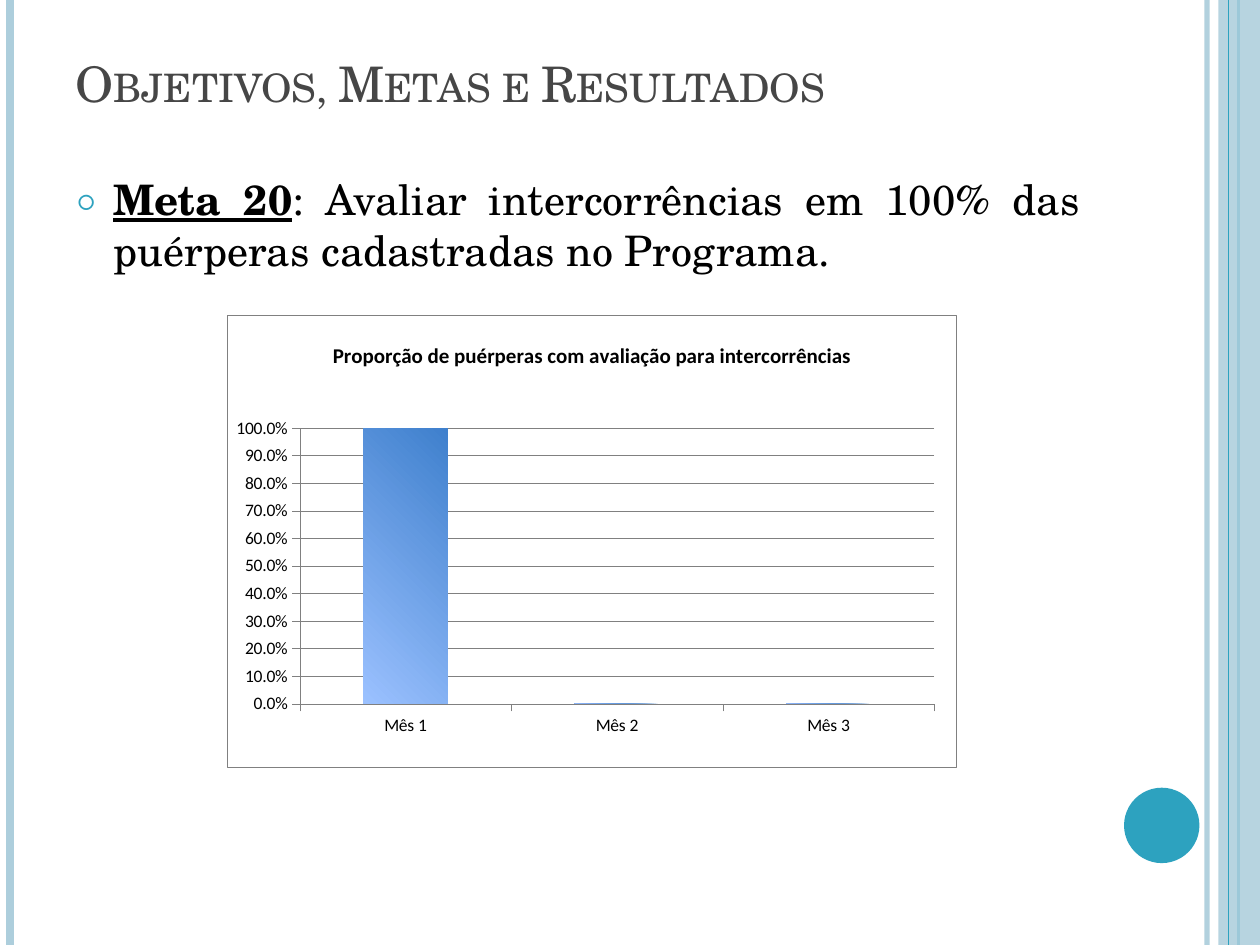
from dataclasses import dataclass

from lxml.etree import SubElement
from pptx import Presentation
from pptx.chart.data import CategoryChartData
from pptx.dml.color import RGBColor
from pptx.enum.chart import XL_CHART_TYPE as ChartType, XL_TICK_MARK as TickMark
from pptx.enum.shapes import MSO_CONNECTOR as Connector, MSO_SHAPE as Shape
from pptx.enum.text import MSO_ANCHOR as Anchor, MSO_AUTO_SIZE as AutoSize, PP_ALIGN as Align
from pptx.oxml import parse_xml
from pptx.oxml.ns import nsdecls, qn
from pptx.util import Cm, Pt


@dataclass(frozen=True)
class Theme:
    accent: str = "2DA2BF"
    pale: str = "ADCEDC"
    heading: str = "464646"
    text: str = "000000"
    background: str = "FFFFFF"
    axis: str = "808080"
    bar_light: str = "9BC1FF"
    bar_dark: str = "3F80CD"
    text_font: str = "TeX Gyre Schola"
    chart_font: str = "Calibri"
    title_size: int = 28
    body_size: int = 24
    chart_title_size: int = 12
    chart_size: int = 10
    hairline: float = 0.25


def set_alpha(element, percent):
    for color in element.iter(qn("a:srgbClr")):
        SubElement(color, qn("a:alpha")).set("val", str(percent * 1000))


def set_layout(element, index, **values):
    """Give a chart part a manual layout, as fractions of the chart."""
    for old in element.findall(qn("c:layout")):
        element.remove(old)
    layout = SubElement(element, qn("c:layout"))
    element.insert(index, layout)
    manual = SubElement(layout, qn("c:manualLayout"))
    for name, value in values.items():
        SubElement(manual, qn(f"c:{name}")).set("val", str(value))


class SlideBuilder:
    def __init__(self, slide, theme):
        self.slide = slide
        self.theme = theme

    def style_font(self, font, size, color, name, bold=False):
        font.size = Pt(size)
        font.color.rgb = RGBColor.from_string(color)
        font.name = name
        font.bold = bold

    def style_line(self, line, color, width):
        line.color.rgb = RGBColor.from_string(color)
        line.width = Pt(width)

    def place(self, shape, left, top, width, height, anchor):
        shape.left, shape.top, shape.width, shape.height = map(Cm, (left, top, width, height))
        frame = shape.text_frame
        frame.auto_size = AutoSize.NONE
        frame.vertical_anchor = anchor
        return frame.paragraphs[0]

    def vertical_line(self, x, color, width, opacity=100):
        line = self.slide.shapes.add_connector(Connector.STRAIGHT, Cm(x), 0, Cm(x), Cm(19.05))
        self.style_line(line.line, color, width)
        properties = line._element.spPr
        set_alpha(properties, opacity)
        SubElement(properties, qn("a:effectLst"))

    def solid_shape(self, kind, left, top, width, height, color, opacity=100):
        shape = self.slide.shapes.add_shape(kind, Cm(left), Cm(top), Cm(width), Cm(height))
        shape.shadow.inherit = False
        shape.fill.solid()
        shape.fill.fore_color.rgb = RGBColor.from_string(color)
        shape.line.fill.background()
        set_alpha(shape._element.spPr, opacity)

    def title(self, text, *box):
        theme = self.theme
        paragraph = self.place(self.slide.shapes.title, *box, Anchor.BOTTOM)
        paragraph.alignment = Align.LEFT
        run = paragraph.add_run()
        run.text = text
        self.style_font(run.font, theme.title_size, theme.heading, theme.text_font)
        run._r.get_or_add_rPr().set("cap", "small")

    def bullet(self, label, text, *box):
        theme = self.theme
        paragraph = self.place(self.slide.placeholders[1], *box, Anchor.TOP)
        paragraph.alignment = Align.JUSTIFY
        paragraph.space_before = Pt(6)
        properties = paragraph._p.get_or_add_pPr()
        properties.set("marL", str(Cm(0.76)))
        properties.set("indent", str(-Cm(0.76)))
        bullet_color = SubElement(properties, qn("a:buClr"))
        SubElement(bullet_color, qn("a:srgbClr")).set("val", theme.accent)
        SubElement(properties, qn("a:buSzPct")).set("val", "70000")
        SubElement(properties, qn("a:buFont")).set("typeface", theme.text_font)
        SubElement(properties, qn("a:buChar")).set("char", "○")
        for content, strong in ((label, True), (text, False)):
            run = paragraph.add_run()
            run.text = content
            self.style_font(run.font, theme.body_size, theme.text, theme.text_font, strong)
            run.font.underline = strong

    def column_chart(self, name, categories, values, *box):
        theme = self.theme
        data = CategoryChartData(number_format="0.0%")
        data.categories = categories
        data.add_series(name, values)
        chart = self.slide.shapes.add_chart(
            ChartType.COLUMN_CLUSTERED, *map(Cm, box), data).chart
        self.style_font(chart.font, theme.chart_size, theme.text, theme.chart_font)
        chart.has_legend = False
        chart.has_title = True
        run = chart.chart_title.text_frame.paragraphs[0].add_run()
        run.text = name
        self.style_font(run.font, theme.chart_title_size, theme.text, theme.chart_font, True)
        set_layout(chart.chart_title._element, 1, xMode="edge", yMode="edge", x=0.14, y=0.05)

        for axis in (chart.category_axis, chart.value_axis):
            axis.major_tick_mark = TickMark.OUTSIDE
            axis.minor_tick_mark = TickMark.NONE
            self.style_line(axis.format.line, theme.axis, theme.hairline)
            self.style_font(axis.tick_labels.font, theme.chart_size, theme.text, theme.chart_font)
        value_axis = chart.value_axis
        value_axis.minimum_scale, value_axis.maximum_scale, value_axis.major_unit = 0, 1, 0.1
        value_axis.tick_labels.number_format = "0.0%"
        value_axis.tick_labels.number_format_is_linked = False
        self.style_line(value_axis.major_gridlines.format.line, theme.axis, theme.hairline)

        plot = chart.plots[0]
        plot.gap_width = 150
        plot.vary_by_categories = False
        self.radial_fill(plot.series[0])
        chart_part = chart._chartSpace.find(qn("c:chart"))
        plot_area = chart_part.find(qn("c:plotArea"))
        set_layout(plot_area, 0, layoutTarget="inner", xMode="edge", yMode="edge",
                   x=0.1, y=0.25, w=0.87, h=0.61)
        plot_area.append(self.area_format("<a:ln><a:noFill/></a:ln>"))
        chart_part.addnext(self.area_format(
            f'<a:ln w="{Pt(theme.hairline)}"><a:solidFill><a:srgbClr val="{theme.axis}"/>'
            "</a:solidFill></a:ln>"))

    def radial_fill(self, series):
        """Shade the bars outwards from their bottom left corner."""
        fill = series.format.fill
        fill.gradient()
        for stop, color in zip(fill.gradient_stops, (self.theme.bar_light, self.theme.bar_dark)):
            stop.color.rgb = RGBColor.from_string(color)
        linear = series._element.find(".//" + qn("a:lin"))
        linear.addnext(parse_xml(
            f'<a:path {nsdecls("a")} path="circle"><a:fillToRect t="100000" r="100000"/></a:path>'))
        linear.getparent().remove(linear)

    def area_format(self, outline):
        return parse_xml(
            f'<c:spPr {nsdecls("c", "a")}><a:solidFill>'
            f'<a:srgbClr val="{self.theme.background}"/></a:solidFill>{outline}</c:spPr>')


def main():
    presentation = Presentation()
    presentation.slide_width, presentation.slide_height = Cm(25.4), Cm(19.05)
    theme = Theme()
    builder = SlideBuilder(presentation.slides.add_slide(presentation.slide_layouts[1]), theme)

    builder.vertical_line(24.33, theme.pale, 3, 93)
    builder.vertical_line(0.2, theme.pale, 4.5)
    builder.vertical_line(24.97, theme.accent, 1.5)
    builder.solid_shape(Shape.RECTANGLE, 24.56, 0, 0.84, 19.05, theme.pale, 87)
    builder.vertical_line(24.76, theme.accent, 0.75)
    builder.solid_shape(Shape.OVAL, 22.66, 15.88, 1.52, 1.52, theme.accent)

    builder.title("Objetivos, Metas e Resultados", 1.27, 0.76, 20.75, 1.63)
    builder.bullet("Meta 20", ": Avaliar intercorrências em 100% das puérperas "
                   "cadastradas no Programa.", 1.27, 3.38, 20.75, 14.6)
    builder.column_chart("Proporção de puérperas com avaliação para intercorrências",
                         ("Mês 1", "Mês 2", "Mês 3"), (1, 0, 0), 4.57, 6.35, 14.71, 9.12)
    presentation.save("out.pptx")


if __name__ == "__main__":
    main()
